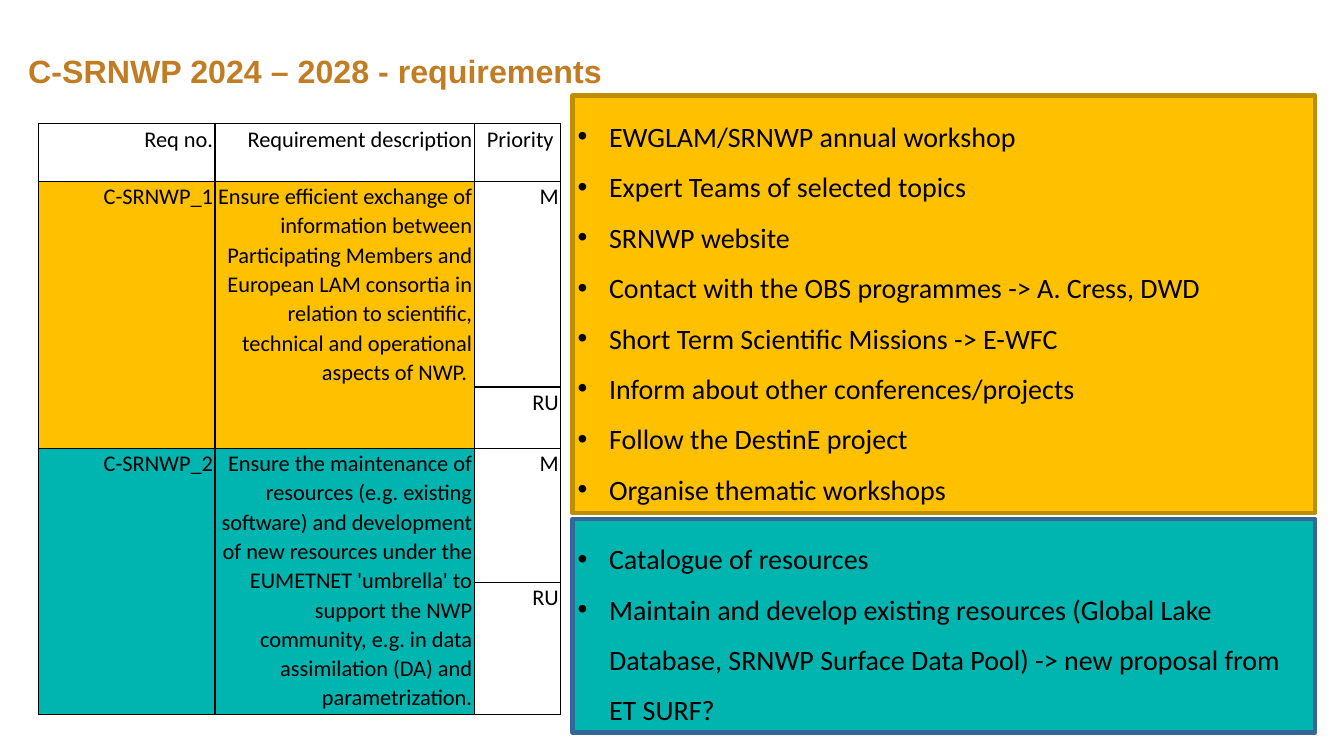
"""Build the C-SRNWP 2024 – 2028 requirements slide."""
from lxml.etree import SubElement
from pptx import Presentation
from pptx.dml.color import RGBColor
from pptx.enum.shapes import MSO_SHAPE
from pptx.enum.text import MSO_ANCHOR, MSO_AUTO_SIZE, PP_ALIGN
from pptx.oxml.ns import qn
from pptx.util import Cm, Pt

GOLD, TEAL, BLACK = "FFC000", "00B4B0", "000000"


def paint(target, color):
    if hasattr(target, "solid"):
        target.solid()
        target = target.fore_color
    target.rgb = RGBColor.from_string(color)


def write(para, text, size, face="Calibri", color=BLACK, bold=False):
    run = para.add_run()
    run.text = text
    run.font.size = Pt(size)
    run.font.name = face
    run.font.bold = bold
    paint(run.font.color, color)


deck = Presentation()
deck.slide_width, deck.slide_height = Cm(33.87), Cm(19.05)
slide = deck.slides.add_slide(deck.slide_layouts[6])

title = slide.shapes.add_textbox(Cm(0.58), Cm(0.76), Cm(29.21), Cm(2.18))
frame = title.text_frame
frame.word_wrap = True
frame.vertical_anchor = MSO_ANCHOR.MIDDLE
frame.margin_left = frame.margin_right = Cm(0.13)
frame.margin_top = frame.margin_bottom = Cm(0.13)
frame.paragraphs[0].line_spacing = 0.9
write(frame.paragraphs[0], "C-SRNWP 2024 – 2028 - requirements", 23,
      "Arial", "C07D24", True)

rows = [
    (["Req no.", "Requirement description", "Priority "], 1.45, None),
    (["C-SRNWP_1",
      "Ensure efficient exchange of information between Participating Members "
      "and European LAM consortia in relation to scientific, technical and "
      "operational aspects of NWP. ", "M"], 5.18, GOLD),
    (["", "", "RU"], 1.55, GOLD),
    (["C-SRNWP_2",
      "Ensure the maintenance of resources (e.g. existing software) and "
      "development of new resources under the EUMETNET 'umbrella' to support "
      "the NWP community, e.g. in data assimilation (DA) and parametrization.",
      "M"], 3.37, TEAL),
    (["", "", "RU"], 3.33, TEAL),
]
widths = [4.45, 6.53, 2.18]
table = slide.shapes.add_table(len(rows), len(widths), Cm(0.97), Cm(3.12),
                               Cm(sum(widths)), Cm(14.88)).table
table.first_row = table.horz_banding = False
for col, width in zip(table.columns, widths):
    col.width = Cm(width)

for i, (texts, height, color) in enumerate(rows):
    table.rows[i].height = Cm(height)
    for j, text in enumerate(texts):
        cell = table.cell(i, j)
        cell.margin_left = cell.margin_right = Cm(0.05)
        cell.margin_top = cell.margin_bottom = 0
        props = cell._tc.get_or_add_tcPr()
        for side in "LRTB":
            edge = SubElement(props, qn(f"a:ln{side}"), w=str(Pt(1)))
            ink = SubElement(edge, qn("a:solidFill"))
            SubElement(ink, qn("a:srgbClr"), val=BLACK)
        if color and j < 2:
            paint(cell.fill, color)
        else:
            cell.fill.background()
        if text:
            para = cell.text_frame.paragraphs[0]
            para.alignment = PP_ALIGN.RIGHT
            para.line_spacing = 1.07
            para.space_after = Pt(8)
            write(para, text, 16)

for top in (1, 3):
    for j in range(2):
        table.cell(top, j).merge(table.cell(top + 1, j))

panels = [
    (2.41, 10.52, GOLD, "BD8E00", [
        "EWGLAM/SRNWP annual workshop",
        "Expert Teams of selected topics",
        "SRNWP website",
        "Contact with the OBS programmes -> A. Cress, DWD",
        "Short Term Scientific Missions -> E-WFC",
        "Inform about other conferences/projects",
        "Follow the DestinE project",
        "Organise thematic workshops"]),
    (13.08, 5.38, TEAL, "336699", [
        "Catalogue of resources",
        "Maintain and develop existing resources (Global Lake Database, SRNWP "
        "Surface Data Pool) -> new proposal from ET SURF?"]),
]
for top, height, color, edge, items in panels:
    panel = slide.shapes.add_shape(MSO_SHAPE.RECTANGLE, Cm(14.43), Cm(top),
                                   Cm(18.72), Cm(height))
    panel.shadow.inherit = False
    paint(panel.fill, color)
    paint(panel.line.fill, edge)
    panel.line.width = Pt(3)
    frame = panel.text_frame
    frame.word_wrap = True
    frame.auto_size = MSO_AUTO_SIZE.SHAPE_TO_FIT_TEXT
    frame.vertical_anchor = MSO_ANCHOR.MIDDLE
    frame.margin_left = frame.margin_right = Cm(0.13)
    frame.margin_top = frame.margin_bottom = Cm(0.13)
    for n, item in enumerate(items):
        para = frame.add_paragraph() if n else frame.paragraphs[0]
        para.alignment = PP_ALIGN.LEFT
        para.line_spacing = 1.5
        props = para._p.get_or_add_pPr()
        props.set("marL", str(Cm(0.79)))
        props.set("indent", str(-Cm(0.79)))
        SubElement(props, qn("a:buFont"), typeface="Arial")
        SubElement(props, qn("a:buChar"), char="•")
        write(para, item, 20)

deck.save("out.pptx")
